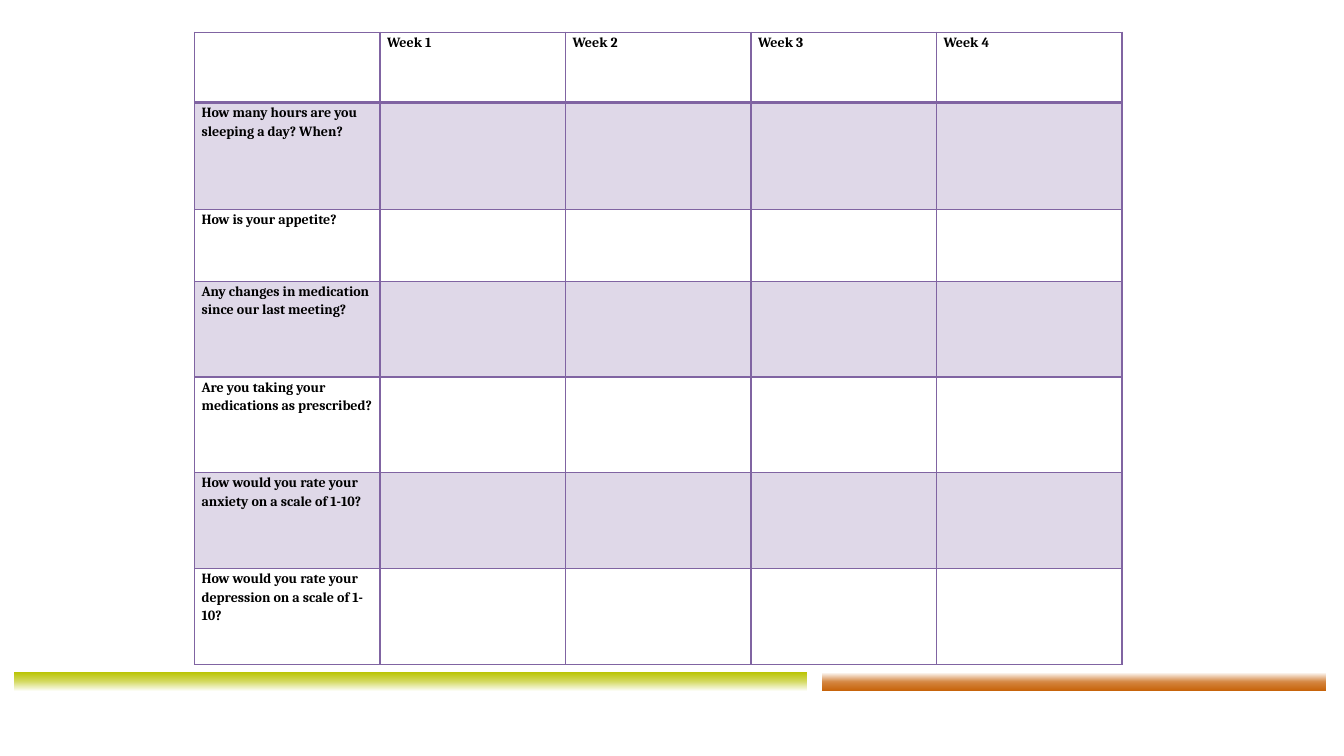
from copy import deepcopy
from dataclasses import dataclass

from pptx import Presentation
from pptx.dml.color import RGBColor as Rgb
from pptx.enum.shapes import MSO_SHAPE as Shape
from pptx.oxml import parse_xml
from pptx.oxml.ns import nsdecls, qn
from pptx.util import Inches, Pt


@dataclass(frozen=True)
class Theme:
    face: str = "Cambria"
    size: float = 10
    ink: str = "000000"
    edge: str = "8064A2"
    band: str = "DFD8E8"
    plain: str = "FFFFFF"
    thin: float = 1
    thick: float = 2.25
    green: tuple = ((0, "FFFFFF"), (0.55, "D2D85B"), (1, "BAC405"))
    rust: tuple = ((0, "C66005"), (0.5, "D48641"), (1, "FFFFFF"))


WEEKS = ["", "Week 1", "Week 2", "Week 3", "Week 4"]
ASKS = [
    "How many hours are you sleeping a day? When?",
    "How is your appetite?",
    "Any changes in medication since our last meeting?",
    "Are you taking your medications as prescribed?",
    "How would you rate your anxiety on a scale of 1-10?",
    "How would you rate your depression on a scale of 1-10?",
]
TALL = [0.7, 1.06, 0.71] + [0.95] * 4
WIDE = 1.84


def apply(item, form):
    for key, value in form.items():
        setattr(item, key, value)


class Deck:
    def __init__(self, theme):
        self.theme = theme
        self.show = Presentation()
        apply(self.show, {"slide_width": Inches(13.33), "slide_height": Inches(7.5)})
        self.slide = self.show.slides.add_slide(self.show.slide_layouts[6])

    def bar(self, left, width, stops):
        shape = self.slide.shapes.add_shape(
            Shape.RECTANGLE, Inches(left), Inches(6.67), Inches(width), Inches(0.19))
        shape.shadow.inherit = False
        shape.line.fill.background()
        shape.fill.gradient()
        marks = shape._element.spPr.find(".//" + qn("a:gsLst"))
        marks.insert(1, deepcopy(marks[0]))
        for stop, (place, tint) in zip(shape.fill.gradient_stops, stops):
            stop.position = place
            stop.color.rgb = Rgb.from_string(tint)

    def grid(self, left, top, rows):
        frame = self.slide.shapes.add_table(
            len(rows), len(rows[0]), Inches(left), Inches(top),
            Inches(WIDE * len(rows[0])), Inches(sum(TALL)))
        table = frame.table
        apply(table, {"first_row": False, "horz_banding": False})
        for col in table.columns:
            col.width = Inches(WIDE)
        for r, (row, tall) in enumerate(zip(rows, TALL)):
            table.rows[r].height = Inches(tall)
            for c, text in enumerate(row):
                self.cell(table.cell(r, c), r, text)

    def cell(self, cell, row, text):
        look = self.theme
        side = Inches(0.07)
        apply(cell, {"margin_left": side, "margin_right": side,
                     "margin_top": 0, "margin_bottom": 0})
        cell.fill.solid()
        cell.fill.fore_color.rgb = Rgb.from_string(look.band if row % 2 else look.plain)
        para = cell.text_frame.paragraphs[0]
        para.line_spacing = 1.15
        if text:
            para.text = text
        apply(para.font, {"name": look.face, "size": Pt(look.size), "bold": True})
        para.font.color.rgb = Rgb.from_string(look.ink)
        self.edges(cell, {
            "L": look.thin, "R": look.thin,
            "T": look.thick if row == 1 else look.thin,
            "B": look.thick if row == 0 else look.thin})

    def edges(self, cell, sides):
        props = cell._tc.get_or_add_tcPr()
        for i, (side, width) in enumerate(sides.items()):
            props.insert(i, parse_xml(
                f'<a:ln{side} {nsdecls("a")} w="{Pt(width)}"><a:solidFill>'
                f'<a:srgbClr val="{self.theme.edge}"/></a:solidFill></a:ln{side}>'))


def main():
    theme = Theme()
    deck = Deck(theme)
    deck.bar(0.14, 7.86, theme.green)
    deck.bar(8.15, 5, theme.rust)
    blanks = [""] * (len(WEEKS) - 1)
    deck.grid(1.93, 0.32, [WEEKS] + [[ask] + blanks for ask in ASKS])
    deck.show.save("out.pptx")


if __name__ == "__main__":
    main()
